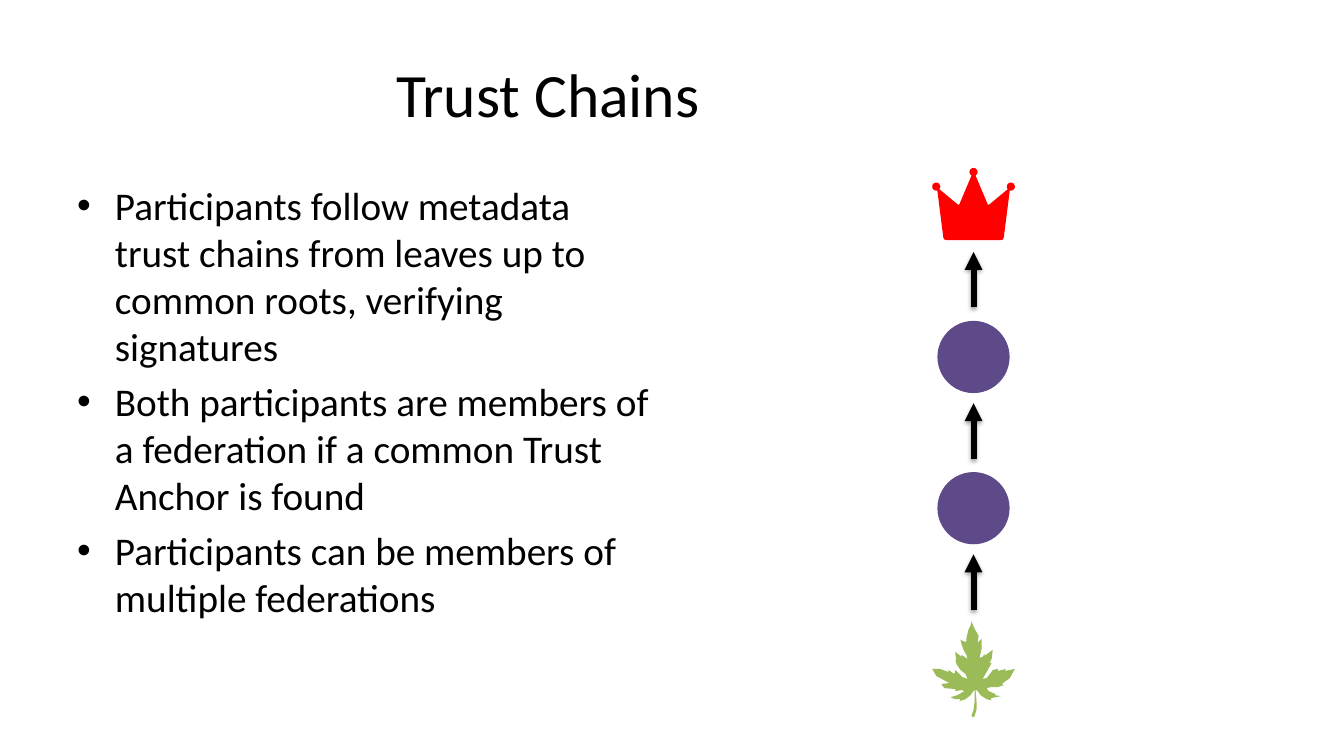
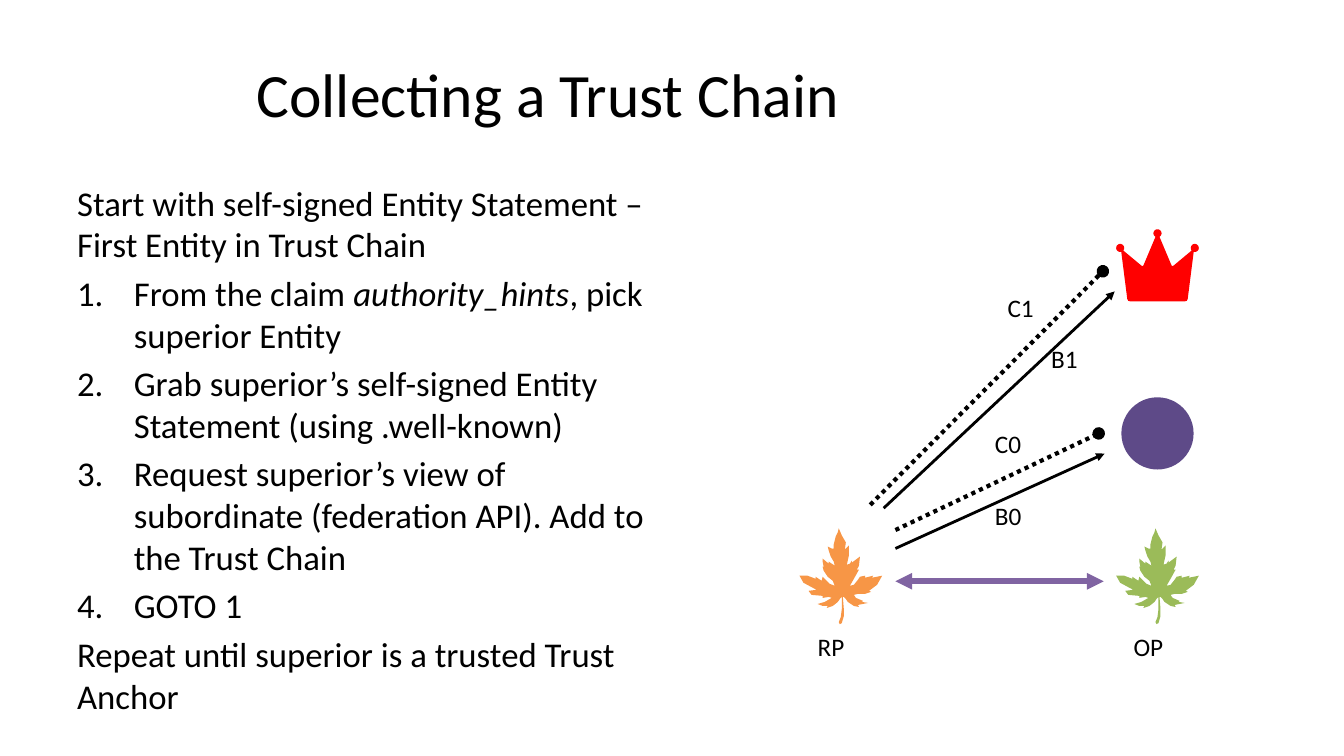
from math import cos, radians, sin

from lxml.etree import SubElement
from pptx import Presentation
from pptx.dml.color import RGBColor
from pptx.enum.dml import MSO_LINE
from pptx.enum.shapes import MSO_CONNECTOR, MSO_SHAPE
from pptx.enum.text import MSO_ANCHOR as ANCHOR, PP_ALIGN as ALIGN
from pptx.oxml.ns import qn
from pptx.util import Inches, Pt

COLUMNS, ROWS = 160, 90
UNIT = Inches(7.5) / ROWS
FONT = "Calibri"
COLORS = {
    "text": "000000",
    "anchor": "FF0000",
    "intermediate": "5E4A88",
    "leaf": "9BBB59",
    "rp": "F79646",
    "link": "8064A2",
}
TITLE_BOX = (8, 3.6, 114.5, 15)
BODY_BOX = (8, 21, 70.7, 59.4)
NODE = 8.6
OUTLINE_UNIT = 0.12  # grid units per outline unit

LEAF = [
    (39, 0), (38, 4), (36, 8), (34, 16), (34, 20), (32, 20), (28, 18),
    (29, 22), (31, 28), (34, 33), (35, 37), (32, 35), (29, 33), (29, 35),
    (23, 30), (23, 33), (24, 38), (23, 38), (24, 42), (28, 48), (33, 52),
    (35, 57), (30, 55), (23, 48), (22, 52), (16, 48), (16, 50), (8, 47),
    (0, 47), (4, 54), (17, 61), (9, 62), (12, 66), (23, 67), (23, 69),
    (29, 68), (32, 69), (25, 73), (18, 75), (23, 77), (28, 77), (27, 79),
    (33, 77), (38, 73), (40, 70), (42, 68), (42, 80), (41, 88), (39, 93),
    (40, 95), (42, 94), (44, 87), (44, 80), (43, 68), (44, 68), (46, 70),
    (48, 73), (54, 77), (59, 78), (58, 76), (68, 74), (62, 73), (63, 72),
    (56, 69), (54, 66), (58, 65), (65, 65), (71, 63), (69, 62), (77, 56),
    (82, 47), (72, 49), (73, 47), (65, 49), (65, 47), (60, 48), (58, 51),
    (54, 56), (50, 57), (54, 50), (59, 41), (57, 41), (59, 37), (60, 28),
    (52, 34), (52, 32), (50, 35), (47, 36), (49, 27), (49, 17), (45, 21),
    (46, 14), (42, 7),
]


def arc(x, y, radius, start, end, steps=16):
    angles = [radians(start + (end - start) * i / steps) for i in range(steps + 1)]
    return [(x + radius * cos(a), y + radius * sin(a)) for a in angles]


def crown():
    """Left half from base to tip, then its mirror image."""
    left = [(14, 71.5), (12, 71), (11, 69), (5, 22), *arc(4, 18.5, 4, 75, 400),
            (25, 36), (26, 36.5), (27, 36), *arc(41, 4, 4, 120, 270)]
    return left + [(82 - x, y) for x, y in reversed(left)]


CROWN = crown()


def grid(*lengths):
    return [round(length * UNIT) for length in lengths]


def rgb(name):
    return RGBColor.from_string(COLORS[name])


class Deck:
    def __init__(self):
        self.prs = Presentation()
        self.prs.slide_width, self.prs.slide_height = grid(COLUMNS, ROWS)
        self.slide = None

    def add_slide(self, heading):
        self.slide = self.prs.slides.add_slide(self.prs.slide_layouts[5])
        title = self.slide.shapes.title
        title.left, title.top, title.width, title.height = grid(*TITLE_BOX)
        title.text_frame.vertical_anchor = ANCHOR.MIDDLE
        paragraph = title.text_frame.paragraphs[0]
        paragraph.text = heading
        paragraph.alignment = ALIGN.CENTER
        self.style(paragraph, 44)

    def style(self, paragraph, size):
        font = paragraph.font
        font.name, font.size = FONT, Pt(size)
        font.color.rgb = rgb("text")

    def body(self, items, size, indent):
        """Items are (marker, text); text between asterisks is italic."""
        frame = self.slide.shapes.add_textbox(*grid(*BODY_BOX)).text_frame
        frame.word_wrap = True
        for index, (marker, text) in enumerate(items):
            paragraph = frame.paragraphs[0] if index == 0 else frame.add_paragraph()
            for part, words in enumerate(text.split("*")):
                run = paragraph.add_run()
                run.text = words
                if part % 2:
                    run.font.italic = True
            if index:
                paragraph.space_before = Pt(size * 0.2)
            if marker:
                self.mark(paragraph, marker, indent)
            self.style(paragraph, size)

    def mark(self, paragraph, marker, indent):
        props = paragraph._p.get_or_add_pPr()
        hang = grid(indent)[0]
        props.set("marL", str(hang))
        props.set("indent", str(-hang))
        if marker == "number":
            SubElement(props, qn("a:buAutoNum"), type="arabicPeriod")
        else:
            SubElement(props, qn("a:buFont"), typeface="Arial")
            SubElement(props, qn("a:buChar"), char=marker)

    def label(self, text, x, y):
        frame = self.slide.shapes.add_textbox(*grid(x, y, 7, 6)).text_frame
        frame.word_wrap = True
        frame.vertical_anchor = ANCHOR.MIDDLE
        frame.margin_left = frame.margin_right = grid(0.75)[0]
        frame.margin_top = frame.margin_bottom = grid(0.75)[0]
        frame.paragraphs[0].text = text
        self.style(frame.paragraphs[0], 18)

    def paint(self, shape, color):
        shape.shadow.inherit = False
        shape.fill.solid()
        shape.fill.fore_color.rgb = rgb(color)
        shape.line.fill.background()

    def node(self, x, y):
        """Circle centred on a grid point."""
        box = grid(x - NODE / 2, y - NODE / 2, NODE, NODE)
        circle = self.slide.shapes.add_shape(MSO_SHAPE.OVAL, *box)
        self.paint(circle, "intermediate")

    def emblem(self, outline, x, top, color):
        """Outline centred on column x, hanging from row top."""
        fine = [(px * 10, py * 10) for px, py in outline]
        scale = OUTLINE_UNIT * UNIT / 10
        builder = self.slide.shapes.build_freeform(*fine[0], scale=scale)
        builder.add_line_segments(fine[1:], close=True)
        shape = builder.convert_to_shape(*grid(x - 41 * OUTLINE_UNIT, top))
        self.paint(shape, color)

    def arrow(self, start, end, width, color="text", head=None, tail="triangle",
              dotted=False, shadow=False):
        line = self.slide.shapes.add_connector(
            MSO_CONNECTOR.STRAIGHT, *grid(*start, *end))
        line.line.color.rgb = rgb(color)
        line.line.width = Pt(width)
        if dotted:
            line.line.dash_style = MSO_LINE.ROUND_DOT
        stroke = line.line._get_or_add_ln()
        for tag, kind in (("a:headEnd", head), ("a:tailEnd", tail)):
            if kind:
                SubElement(stroke, qn(tag), type=kind)
        effects = SubElement(line._element.spPr, qn("a:effectLst"))
        if shadow:
            cast = SubElement(effects, qn("a:outerShdw"), blurRad=str(Pt(3.1)),
                              dist=str(Pt(1.6)), dir="5400000", rotWithShape="0")
            tint = SubElement(cast, qn("a:srgbClr"), val=COLORS["text"])
            SubElement(tint, qn("a:alpha"), val="38000")


def trust_chains(deck):
    deck.add_slide("Trust Chains")
    deck.body([("•", text) for text in (
        "Participants follow metadata trust chains from leaves up to common "
        "roots, verifying signatures",
        "Both participants are members of a federation if a common Trust "
        "Anchor is found",
        "Participants can be members of multiple federations",
    )], size=28, indent=4.5)
    chain, step = 115.9, 18
    deck.emblem(CROWN, chain, 20, "anchor")
    for level in range(2):
        deck.node(chain, 42.5 + level * step)
    deck.emblem(LEAF, chain, 74, "leaf")
    for level in range(3):
        foot = 36.6 + level * step
        deck.arrow((chain, foot), (chain, foot - 6.6), 4.25, shadow=True)


def collecting(deck):
    deck.add_slide("Collecting a Trust Chain")
    steps = (
        "From the claim *authority_hints*, pick superior Entity",
        "Grab superior’s self-signed Entity Statement (using .well-known)",
        "Request superior’s view of subordinate (federation API). Add to the "
        "Trust Chain",
        "GOTO 1",
    )
    deck.body([
        (None, "Start with self-signed Entity Statement – First Entity in Trust Chain"),
        *[("number", step) for step in steps],
        (None, "Repeat until superior is a trusted Trust Anchor"),
    ], size=24.8, indent=6.75)
    rp, op, leaf_top = 100.1, 137.8, 62.9
    deck.emblem(CROWN, op, 27.3, "anchor")
    deck.node(op, 51.6)
    deck.emblem(LEAF, op, leaf_top, "leaf")
    deck.emblem(LEAF, rp, leaf_top, "rp")
    deck.arrow((106.6, 69.2), (131.4, 69.2), 4, "link", head="triangle")
    for start, end in (((106.6, 65.3), (131.5, 54)),
                       ((105.2, 60.5), (132.7, 34.7))):
        deck.arrow(start, end, 2)
    for start, end in (((106.6, 63.1), (130.8, 51.6)),
                       ((103.6, 60.1), (131.3, 32.3))):
        deck.arrow(start, end, 3, tail="oval", dotted=True)
    for text, x, y in (("RP", 96.6, 74), ("OP", 134.2, 74),
                       ("B0", 117.7, 58.4), ("C0", 117.7, 49.8),
                       ("B1", 124.4, 39.7), ("C1", 119.2, 33.6)):
        deck.label(text, x, y)


def main():
    deck = Deck()
    trust_chains(deck)
    collecting(deck)
    deck.prs.save("out.pptx")


if __name__ == "__main__":
    main()
